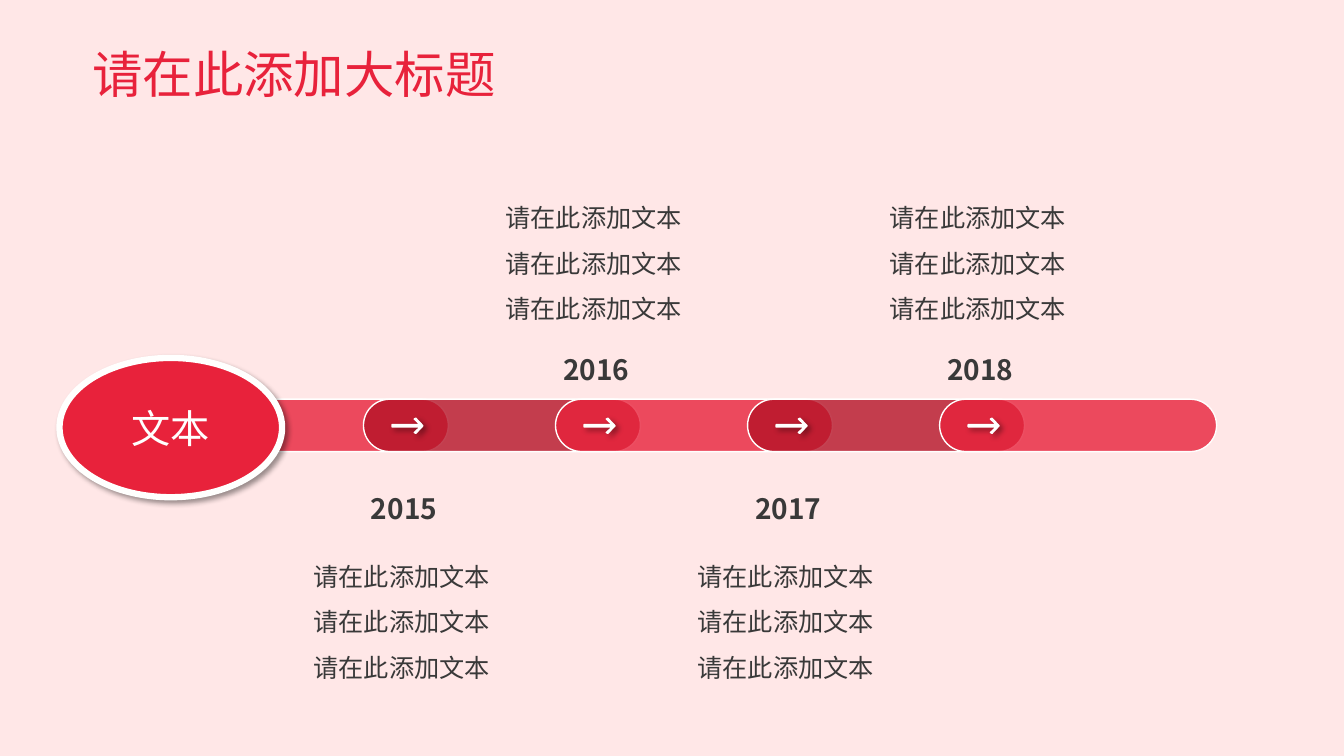
from dataclasses import dataclass

from lxml.etree import SubElement
from pptx import Presentation
from pptx.dml.color import RGBColor
from pptx.enum.shapes import MSO_SHAPE
from pptx.enum.text import MSO_ANCHOR, PP_ALIGN
from pptx.oxml.ns import qn
from pptx.util import Cm, Pt


@dataclass(frozen=True)
class Theme:
    font: str = "Noto Sans CJK SC"
    background: str = "FFE7E7"
    red: str = "E8223B"
    dark_red: str = "B51327"
    white: str = "FFFFFE"
    ink: str = "393939"
    title_size: int = 36
    hub_size: int = 28
    year_size: int = 20
    body_size: int = 18


class TimelinePage:
    # Outline in hundredths of a centimetre, starting at the tip
    ARROW = [(78, 19), (60, 0), (56, 2), (71, 16), (0, 16),
             (0, 22), (71, 22), (56, 36), (60, 38)]

    def __init__(self, deck, theme):
        self.theme = theme
        self.page = deck.slides.add_slide(deck.slide_layouts[6])
        fill = self.page.background.fill
        fill.solid()
        fill.fore_color.rgb = RGBColor.from_string(theme.background)

    def paint(self, shape, color, line_width, opacity=100):
        shape.shadow.inherit = False
        shape.fill.solid()
        shape.fill.fore_color.rgb = RGBColor.from_string(color)
        shape.line.color.rgb = RGBColor.from_string(self.theme.white)
        shape.line.width = Pt(line_width)
        if opacity < 100:
            solid = shape._element.spPr.find(qn("a:solidFill"))
            SubElement(solid[0], qn("a:alpha"), val=str(opacity * 1000))

    def cast_shadow(self, shape):
        """Add a soft shadow; the shape must be painted already."""
        effects = shape._element.spPr.find(qn("a:effectLst"))
        shadow = SubElement(effects, qn("a:outerShdw"), blurRad=str(Pt(4)),
                            dist=str(Pt(3)), dir="2700000", algn="tl", rotWithShape="0")
        black = SubElement(shadow, qn("a:srgbClr"), val="000000")
        SubElement(black, qn("a:alpha"), val="40000")

    def set_text(self, shape, text, size, color, bold=False,
                 align=PP_ALIGN.LEFT, spacing=1.0, anchor=MSO_ANCHOR.TOP):
        frame = shape.text_frame
        frame.word_wrap = True
        frame.vertical_anchor = anchor
        para = frame.paragraphs[0]
        para.text = text
        para.alignment = align
        para.line_spacing = spacing
        font = para.font
        font.size = Pt(size)
        font.bold = bold
        font.color.rgb = RGBColor.from_string(color)
        font.name = self.theme.font
        # East Asian text takes its typeface from a separate element
        properties = para._p.pPr.find(qn("a:defRPr"))
        SubElement(properties, qn("a:ea"), typeface=self.theme.font)

    def text(self, left, top, width, height, text, size, color, **style):
        box = self.page.shapes.add_textbox(Cm(left), Cm(top), Cm(width), Cm(height))
        self.set_text(box, text, size, color, **style)

    def bar(self, left, top, width, height, color):
        bar = self.page.shapes.add_shape(
            MSO_SHAPE.ROUNDED_RECTANGLE, Cm(left), Cm(top), Cm(width), Cm(height))
        bar.adjustments[0] = 0.5
        self.paint(bar, color, 1, opacity=80)

    def arrow(self, left, top):
        tip, *others = self.ARROW
        builder = self.page.shapes.build_freeform(*tip, scale=Cm(0.01))
        builder.add_line_segments(others, close=True)
        arrow = builder.convert_to_shape(Cm(left), Cm(top))
        self.paint(arrow, self.theme.white, 1)
        SubElement(arrow._element.spPr.find(qn("a:ln")), qn("a:round"))
        self.cast_shadow(arrow)

    def hub(self, left, top, width, height, text):
        hub = self.page.shapes.add_shape(
            MSO_SHAPE.OVAL, Cm(left), Cm(top), Cm(width), Cm(height))
        self.paint(hub, self.theme.red, 4.5)
        self.cast_shadow(hub)
        self.set_text(hub, text, self.theme.hub_size, self.theme.white,
                      align=PP_ALIGN.CENTER, anchor=MSO_ANCHOR.MIDDLE)


def main():
    deck = Presentation()
    deck.slide_width, deck.slide_height = Cm(33.87), Cm(19.05)
    theme = Theme()
    page = TimelinePage(deck, theme)
    step = 4.84

    page.text(2.08, 0.76, 24.18, 2.36, "请在此添加大标题", theme.title_size, theme.red,
              spacing=0.9, anchor=MSO_ANCHOR.MIDDLE)

    for index in range(5):
        color = theme.dark_red if index % 2 else theme.red
        page.bar(4.32 + index * step, 10.06, 6.98, 1.32, color)

    for index, year in enumerate(["2015", "2016", "2017", "2018"]):
        offset = index * step
        above = index % 2 == 1
        year_top, body_top = (8.33, 4.6) if above else (11.84, 13.64)
        page.arrow(9.88 + offset, 10.54)
        page.text(9.1 + offset, year_top, 2.34, 1.4, year, theme.year_size, theme.ink,
                  bold=True, align=PP_ALIGN.JUSTIFY, spacing=1.5)
        page.text(7.65 + offset, body_top, 5.23, 3.71, "请在此添加文本" * 3,
                  theme.body_size, theme.ink, spacing=1.5)

    page.hub(1.5, 9.02, 5.61, 3.51, "文本")
    deck.save("out.pptx")


if __name__ == "__main__":
    main()
